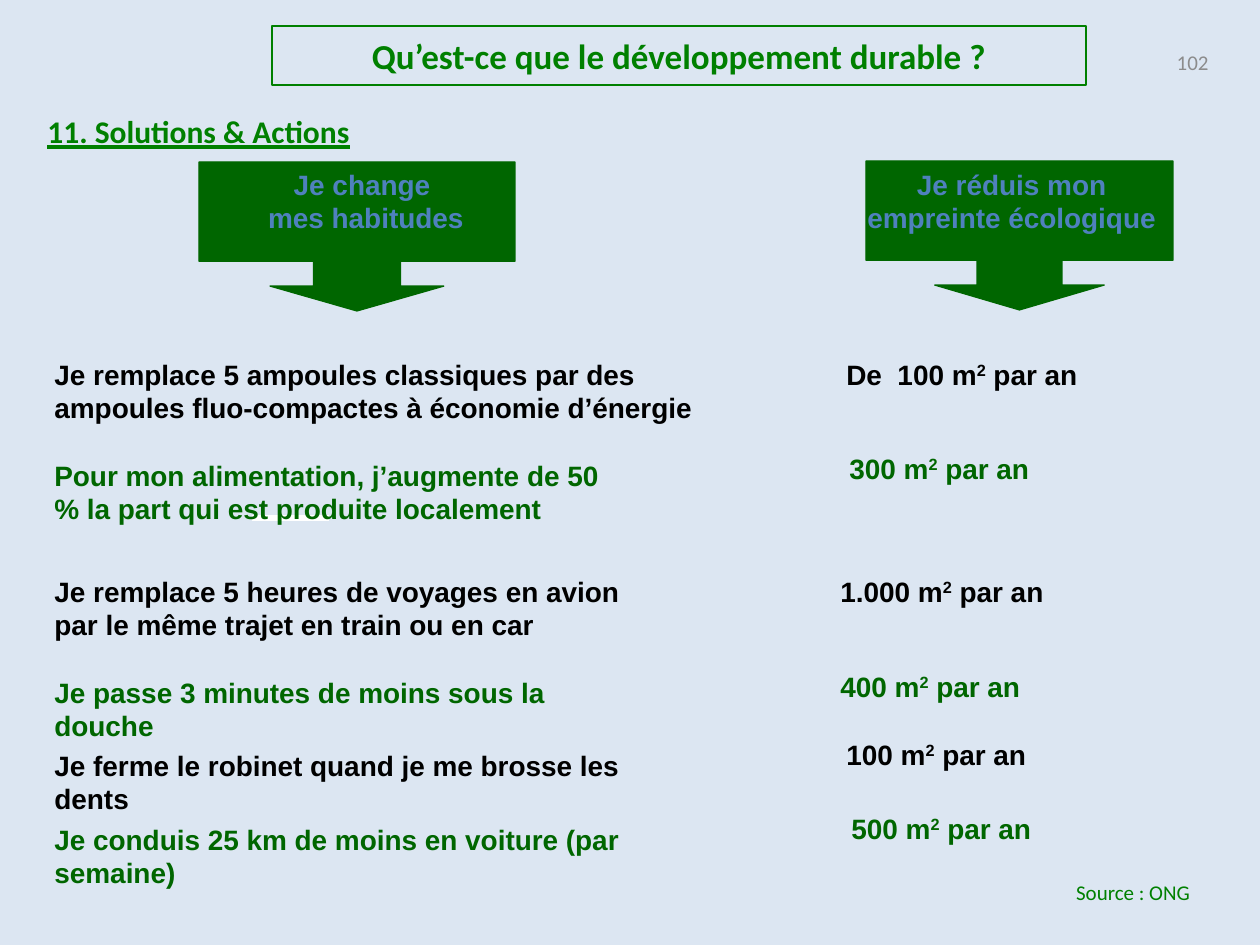
from pptx import Presentation
from pptx import util as u
from pptx.dml.color import RGBColor
from pptx.enum import shapes, text

PX = 914400 // 126
GREEN, DARK, BLACK, BLUE = "008000", "006600", "000000", "4F81BD"
LEFT, CENTER, RIGHT = text.PP_ALIGN.LEFT, text.PP_ALIGN.CENTER, text.PP_ALIGN.RIGHT
TOP, MIDDLE = text.MSO_ANCHOR.TOP, text.MSO_ANCHOR.MIDDLE
rgb = RGBColor.from_string


def write(sp, content, color, size=16, name="Arial", bold=True, underline=None,
          align=LEFT, anchor=TOP, wrap=True):
    """Fill a shape with one paragraph; '\\n' breaks a line, '²' is a raised 2."""
    tf = sp.text_frame
    frame = {"word_wrap": wrap, "vertical_anchor": anchor,
             "auto_size": text.MSO_AUTO_SIZE.NONE}
    for key, value in frame.items():
        setattr(tf, key, value)
    p = tf.paragraphs[0]
    p.alignment = align
    font = {"size": u.Pt(size), "name": name, "bold": bold, "underline": underline}
    for i, line in enumerate(content.split("\n")):
        if i:
            p.add_line_break()
        for part in line.replace("²", "|²|").split("|"):
            r = p.add_run()
            r.text = part.replace("²", "2")
            for key, value in font.items():
                setattr(r.font, key, value)
            r.font.color.rgb = rgb(color)
            if part == "²":
                r.font._element.set("baseline", "30000")


def box(*place):
    return s.shapes.add_textbox(*(v * PX for v in place))


prs = Presentation()
prs.slide_width, prs.slide_height = u.Inches(10), u.Inches(7.5)
s = prs.slides.add_slide(prs.slide_layouts[5])
s.background.fill.solid()
s.background.fill.fore_color.rgb = rgb("DCE6F2")

# Title in a thin frame
title = s.shapes.title
place = {"left": 272, "top": 26, "width": 814, "height": 59}
for key, value in place.items():
    setattr(title, key, value * PX)
title.line.color.rgb = rgb(GREEN)
title.line.width = u.Pt(0.75)
write(title, "Qu’est-ce que le développement durable ?", GREEN, 20, "Calibri",
      align=CENTER, anchor=MIDDLE)

# White dash behind the second action
dash = s.shapes.add_shape(shapes.MSO_SHAPE.RECTANGLE, 252 * PX, 515 * PX, 77 * PX, 6 * PX)
dash.shadow.inherit = False
dash.fill.solid()
dash.fill.fore_color.rgb = rgb("FFFFFF")
dash.line.fill.background()

# Page number, section heading and source
write(box(927, 37, 294, 50), "102", "8C8C8C", 12, "Calibri", False,
      align=RIGHT, anchor=MIDDLE)
write(box(35, 106, 330, 50), "11. Solutions & Actions", GREEN, 18, "Calibri",
      underline=True, wrap=False)
write(box(1060, 873, 151, 38), "Source : ONG ", GREEN, 12, "Calibri", False,
      align=CENTER, anchor=MIDDLE)

# Column headings: callout arrow, its neck ratio, then the label over it
headings = [
    ((199, 162, 316, 149), 0.583, (246, 161, 232, 63), "Je change\n mes habitudes", False),
    ((866, 161, 307, 149), 0.569, (829, 161, 373, 93),
     "Je réduis mon \nempreinte écologique ", True),
]
for place, neck, label_place, label, wrap in headings:
    sp = s.shapes.add_shape(shapes.MSO_SHAPE.DOWN_ARROW_CALLOUT, *(v * PX for v in place))
    sp.shadow.inherit = False
    sp.fill.solid()
    sp.fill.fore_color.rgb = rgb(DARK)
    sp.line.color.rgb = rgb(DARK)
    sp.line.width = u.Pt(0.75)
    for i, value in enumerate((neck, neck, 0.167, 0.667)):
        sp.adjustments[i] = value
    write(box(*label_place), label, BLUE, align=CENTER, wrap=wrap)

# Actions and the footprint each one saves, in alternating colours
rows = [
    (351, 727, "Je remplace 5 ampoules classiques par des ampoules fluo-compactes "
               "à économie d’énergie", 834, 351, "De  100 m² par an"),
    (452, 596, "Pour mon alimentation, j’augmente de 50 % la part qui est produite "
               "localement", 837, 445, "300 m² par an"),
    (568, 596, "Je remplace 5 heures de voyages en avion par le même trajet en train "
               "ou en car", 828, 568, "1.000 m² par an"),
    (669, 596, "Je passe 3 minutes de moins sous la douche", 828, 663, "400 m² par an"),
    (742, 596, "Je ferme le robinet quand je me brosse les dents", 834, 731, "100 m² par an"),
    (816, 596, "Je conduis 25 km de moins en voiture (par semaine)", 839, 805,
     "500 m² par an"),
]
for i, (y, width, action, saving_x, saving_y, saving) in enumerate(rows):
    color = (BLACK, DARK)[i % 2]
    write(box(42, y, width, 81), action, color)
    write(box(saving_x, saving_y, 370, 47), saving, color)

prs.save("out.pptx")
